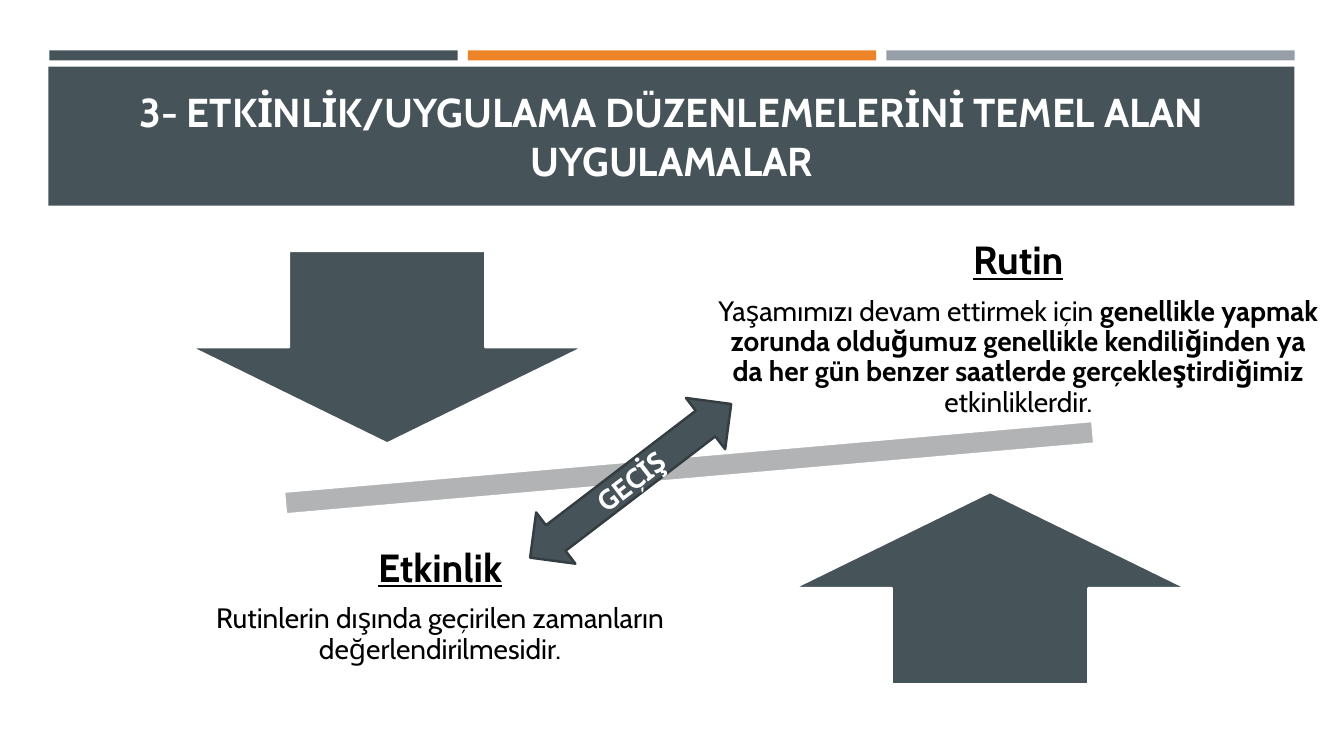
from pptx import Presentation
from pptx.dml.color import RGBColor
from pptx.enum.shapes import MSO_SHAPE
from pptx.enum.text import MSO_ANCHOR, MSO_AUTO_SIZE, PP_ALIGN
from pptx.util import Inches, Pt

RECT, MINUS = MSO_SHAPE.RECTANGLE, MSO_SHAPE.MATH_MINUS
DOWN, UP = MSO_SHAPE.DOWN_ARROW, MSO_SHAPE.UP_ARROW
BOTH_WAYS = MSO_SHAPE.LEFT_RIGHT_ARROW
MIDDLE, BOTTOM = MSO_ANCHOR.MIDDLE, MSO_ANCHOR.BOTTOM
CENTER, NO_FIT = PP_ALIGN.CENTER, MSO_AUTO_SIZE.NONE

FONT = "Cabin"
COLORS = {"slate": "465359", "orange": "ED8428", "gray": "969FA7",
          "beam": "B1B3B5", "edge": "343D42", "white": "FFFFFF", "black": "000000"}

TITLE = "3- ETKİNLİK/UYGULAMA DÜZENLEMELERİNİ TEMEL ALAN UYGULAMALAR"
TRANSITION = "GEÇİŞ"
STRIPES = ["slate", "orange", "gray"]
BALANCE = [  # preset, box, rotation
    (MINUS, (1.36, 4.16, 10.95, 0.96), 355, "beam"),
    (DOWN, (1.89, 2.49, 3.9, 1.91), 0, "slate"),
    (UP, (7.87, 4.88, 3.9, 1.91), 0, "slate"),
]
CONCEPTS = [  # box, heading, (text, bold) runs
    ((6.87, 2.27, 6.46, 2), "Rutin", [
        ("Yaşamımızı devam ettirmek için ", False),
        ("genellikle yapmak zorunda olduğumuz genellikle kendiliğinden ya da "
         "her gün benzer saatlerde gerçekleştirdiğimiz ", True),
        ("etkinliklerdir.", False)]),
    ((1.07, 5.02, 6.59, 2), "Etkinlik", [
        ("Rutinlerin dışında geçirilen zamanların değerlendirilmesidir.", False)]),
]


def rgb(name):
    return RGBColor.from_string(COLORS[name])


def add_shape(slide, preset, box, fill, line=None, rotation=0):
    sp = slide.shapes.add_shape(preset, *map(Inches, box))
    sp.shadow.inherit = False
    sp.rotation = rotation
    sp.fill.solid()
    sp.fill.fore_color.rgb = rgb(fill)
    if line:
        sp.line.color.rgb = rgb(line)
        sp.line.width = Pt(1.75)
    else:
        sp.line.fill.background()
    return sp


def set_frame(tf, anchor, inset=None):
    formats = {"word_wrap": True, "auto_size": NO_FIT, "vertical_anchor": anchor}
    if inset is not None:
        for side in ("left", "top", "right", "bottom"):
            formats[f"margin_{side}"] = Inches(inset)
    for name, value in formats.items():
        setattr(tf, name, value)


def write(p, runs, size, color, underline=False, **spacing):
    """Fill a centred paragraph with (text, bold) runs."""
    for name, value in {"alignment": CENTER, **spacing}.items():
        setattr(p, name, value)
    for text, bold in runs:
        r = p.add_run()
        r.text = text
        for name, value in {"name": FONT, "size": Pt(size), "bold": bold,
                            "underline": underline}.items():
            setattr(r.font, name, value)
        r.font.color.rgb = rgb(color)


def add_header(slide):
    for i, color in enumerate(STRIPES):
        add_shape(slide, RECT, (0.49 + i * 4.15, 0.5, 4.05, 0.1), color)
    add_shape(slide, RECT, (0.48, 0.66, 12.36, 1.38), "slate")
    title = slide.shapes.title
    title.left, title.top, title.width, title.height = map(
        Inches, (0.63, 0.8, 12.06, 1.08))
    set_frame(title.text_frame, BOTTOM)
    write(title.text_frame.paragraphs[0], [(TITLE, True)], 28.8, "white")
    # Bring the title in front of its band
    title.element.getparent().append(title.element)


def add_concept(slide, box, heading, runs):
    tf = slide.shapes.add_textbox(*map(Inches, box)).text_frame
    set_frame(tf, MIDDLE, 0.22)
    write(tf.paragraphs[0], [(heading, True)], 28, "black", underline=True,
          line_spacing=0.9, space_after=Pt(10))
    write(tf.add_paragraph(), runs, 20, "black", line_spacing=0.9, space_after=Pt(7))


def main():
    prs = Presentation()
    prs.slide_width, prs.slide_height = Inches(13.33), Inches(7.5)
    slide = prs.slides.add_slide(prs.slide_layouts[5])
    add_header(slide)
    for preset, box, rotation, fill in BALANCE:
        add_shape(slide, preset, box, fill, "white", rotation)
    for concept in CONCEPTS:
        add_concept(slide, *concept)
    arrow = add_shape(slide, BOTH_WAYS, (5, 4.45, 2.51, 0.64), "slate", "edge", 322.6)
    set_frame(arrow.text_frame, MIDDLE)
    write(arrow.text_frame.paragraphs[0], [(TRANSITION, True)], 20, "white")
    prs.save("out.pptx")


if __name__ == "__main__":
    main()
